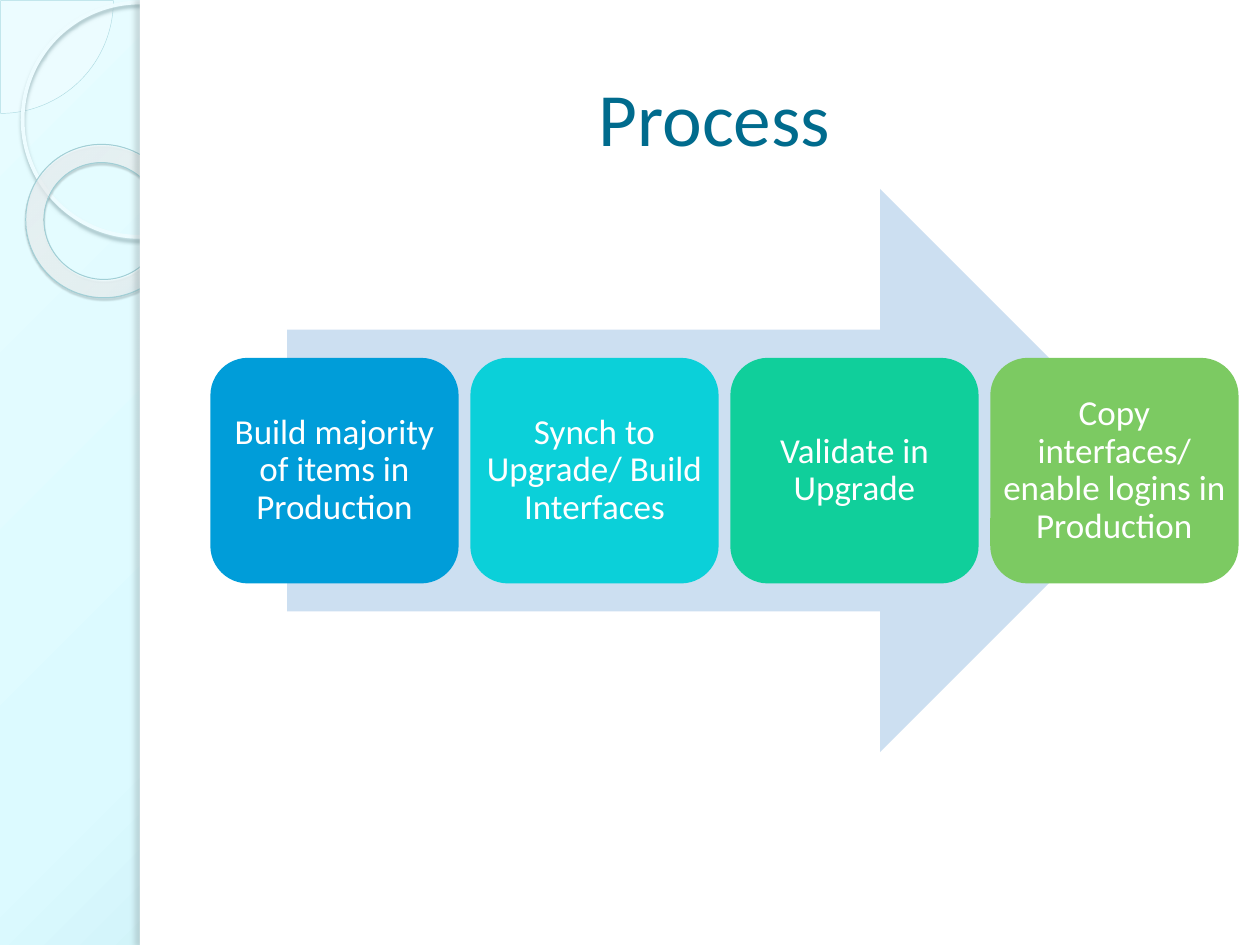
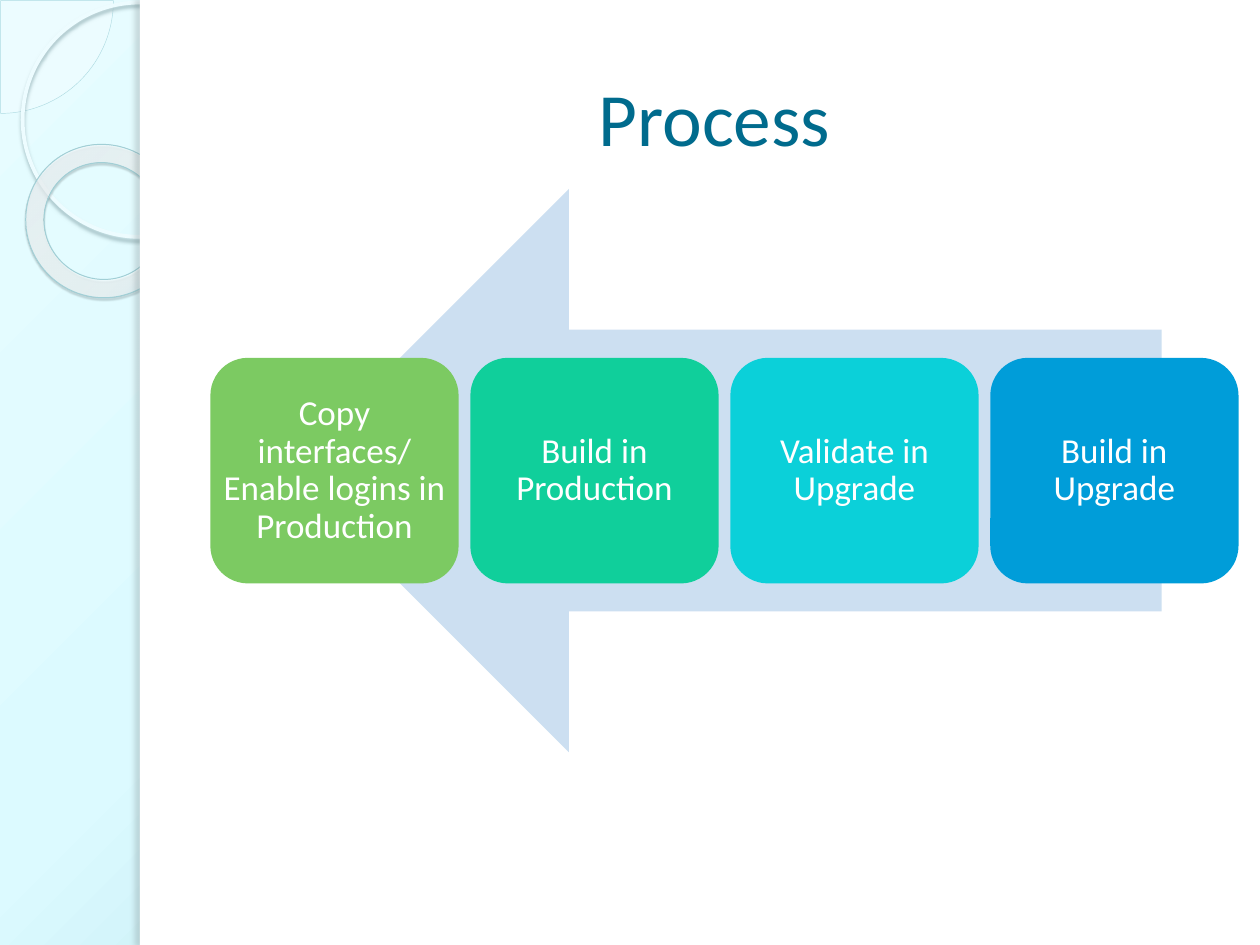
from lxml.etree import SubElement
from pptx import Presentation
from pptx.dml.color import RGBColor
from pptx.enum.shapes import MSO_SHAPE
from pptx.enum.text import MSO_ANCHOR, PP_ALIGN
from pptx.oxml.ns import qn
from pptx.util import Inches, Pt

# Content: steps in the order of work, and the way the arrow points
TITLE = "Process"
PROCESSES = [
    {
        "arrow": MSO_SHAPE.RIGHT_ARROW,
        "steps": [
            "Build majority of items in Production",
            "Synch to Upgrade/ Build Interfaces",
            "Validate in Upgrade",
            "Copy interfaces/ enable logins in Production",
        ],
    },
    {
        "arrow": MSO_SHAPE.LEFT_ARROW,
        "steps": [
            "Build in Upgrade",
            "Validate in Upgrade",
            "Build in Production",
            "Copy interfaces/ Enable logins in Production",
        ],
    },
]

# Colours and font
FONT = "Calibri"
WHITE = RGBColor(0xFF, 0xFF, 0xFF)
TITLE_COLOR = RGBColor(0x00, 0x6B, 0x8D)
ARROW_COLOR = RGBColor(0xCC, 0xDF, 0xF1)
STEP_COLORS = [
    RGBColor(0x00, 0x9D, 0xD9),
    RGBColor(0x0B, 0xD0, 0xD9),
    RGBColor(0x10, 0xCF, 0x9B),
    RGBColor(0x7C, 0xCA, 0x62),
]
PIE_FILL = RGBColor(0xF8, 0xFE, 0xFF)
PIE_LINE = RGBColor(0xAF, 0xDB, 0xE2)
RING_LINE = RGBColor(0xED, 0xFC, 0xFF)
RING_SHADOW = RGBColor(0x9C, 0xB9, 0xBE)
DONUT_LINE = RGBColor(0xA1, 0xCF, 0xD6)
DONUT_SHADOW = RGBColor(0x4B, 0x5E, 0x61)
PANEL_SHADOW = RGBColor(0x6C, 0x7A, 0x7C)

# Gradient stops: position in percent, colour, opacity in percent
BACKGROUND_STOPS = [
    (0, RGBColor(0xE7, 0xFC, 0xFF), 100),
    (40, RGBColor(0xDC, 0xFA, 0xFF), 100),
    (100, RGBColor(0x92, 0xCE, 0xD7), 100),
]
DONUT_STOPS = [
    (0, RGBColor(0xF9, 0xFE, 0xFF), 70),
    (70, RGBColor(0xFD, 0xFF, 0xFF), 55),
    (100, RGBColor(0x9E, 0xF2, 0xFF), 60),
]

# Layout in inches
WIDTH, HEIGHT = 10, 7.5
PANEL_LEFT = 1.11
TITLE_BOX = (1.57, 0.3, 8.2, 1.25)
ARROW_BOX = (2.28, 1.5, 6.94, 4.47)
STEP_LEFT, STEP_RIGHT = 1.67, 9.83
STEP_WIDTH, STEP_HEIGHT = 1.97, 1.79


def add_color(parent, color, opacity):
    node = SubElement(parent, qn("a:srgbClr"), val=str(color))
    if opacity < 100:
        SubElement(node, qn("a:alpha"), val=str(opacity * 1000))


def set_radial_gradient(properties, stops, focus):
    """Replace a solid fill by a circular gradient around a focus point."""
    solid = properties.find(qn("a:solidFill"))
    gradient = SubElement(properties, qn("a:gradFill"), rotWithShape="1")
    properties.replace(solid, gradient)
    stop_list = SubElement(gradient, qn("a:gsLst"))
    for position, color, opacity in stops:
        stop = SubElement(stop_list, qn("a:gs"), pos=str(position * 1000))
        add_color(stop, color, opacity)
    circle = SubElement(gradient, qn("a:path"))
    circle.set("path", "circle")
    x, y = focus
    edges = {"l": x, "t": y, "r": 100 - x, "b": 100 - y}
    SubElement(circle, qn("a:fillToRect"),
               {edge: str(share * 1000) for edge, share in edges.items()})


def set_shadow(shape, color, opacity, blur, distance, angle):
    effects = shape.element.spPr.find(qn("a:effectLst"))
    shadow = SubElement(effects, qn("a:outerShdw"), blurRad=str(Pt(blur)),
                        dist=str(Pt(distance)), dir=str(angle * 60000),
                        algn="tl", rotWithShape="0")
    add_color(shadow, color, opacity)


def add_shape(slide, kind, box, fill=None, line=None, line_width=0):
    shape = slide.shapes.add_shape(kind, *map(Inches, box))
    shape.shadow.inherit = False
    if fill is None:
        shape.fill.background()
    else:
        shape.fill.solid()
        shape.fill.fore_color.rgb = fill
    if line is None:
        shape.line.fill.background()
    else:
        shape.line.color.rgb = line
        shape.line.width = Pt(line_width)
    return shape


def write_text(shape, text, size, color):
    frame = shape.text_frame
    frame.word_wrap = True
    frame.vertical_anchor = MSO_ANCHOR.MIDDLE
    paragraph = frame.paragraphs[0]
    paragraph.alignment = PP_ALIGN.CENTER
    run = paragraph.add_run()
    run.text = text
    run.font.name = FONT
    run.font.size = Pt(size)
    run.font.color.rgb = color
    return frame


def add_side_band(slide):
    # Tinted background
    slide.background.fill.solid()
    background = slide.element.find(".//" + qn("p:bgPr"))
    set_radial_gradient(background, BACKGROUND_STOPS, (-24, -20))

    # Quarter disc in the corner
    pie = add_shape(slide, MSO_SHAPE.PIE, (-0.89, -0.89, 1.79, 1.79),
                    PIE_FILL, PIE_LINE, 0.25)
    pie.adjustments[0] = 0
    pie.adjustments[1] = 54.02
    tint = pie.element.spPr.find(qn("a:solidFill"))[0]
    SubElement(tint, qn("a:alpha"), val="33000")

    # Thin ring and thick ring
    ring = add_shape(slide, MSO_SHAPE.OVAL, (0.18, 0.02, 1.86, 1.86),
                     line=RING_LINE, line_width=2.15)
    set_shadow(ring, RING_SHADOW, 85, 2, 2, 90)
    donut = add_shape(slide, MSO_SHAPE.DONUT, (0.2, 1.15, 1.23, 1.21),
                      WHITE, DONUT_LINE, 0.58)
    donut.adjustments[0] = 0.12
    donut.rotation = 38.6
    set_radial_gradient(donut.element.spPr, DONUT_STOPS, (-408, -50))
    set_shadow(donut, DONUT_SHADOW, 35, 1, 1.2, 75)

    # White panel with a shaded left edge
    add_shape(slide, MSO_SHAPE.RECTANGLE,
              (PANEL_LEFT, 0, WIDTH - PANEL_LEFT, HEIGHT), WHITE)
    edge = add_shape(slide, MSO_SHAPE.RECTANGLE,
                     (PANEL_LEFT, 0, 0.08, HEIGHT), WHITE)
    set_shadow(edge, PANEL_SHADOW, 25, 3, 3, 180)


def add_process(slide, arrow, steps):
    add_shape(slide, arrow, ARROW_BOX, ARROW_COLOR)
    pitch = (STEP_RIGHT - STEP_LEFT - STEP_WIDTH) / (len(steps) - 1)
    top = ARROW_BOX[1] + (ARROW_BOX[3] - STEP_HEIGHT) / 2
    for index, (step, color) in enumerate(zip(steps, STEP_COLORS)):
        leftward = arrow == MSO_SHAPE.LEFT_ARROW
        column = len(steps) - 1 - index if leftward else index
        box = (STEP_LEFT + column * pitch, top, STEP_WIDTH, STEP_HEIGHT)
        card = add_shape(slide, MSO_SHAPE.ROUNDED_RECTANGLE, box, color)
        frame = write_text(card, step, 20, WHITE)
        frame.paragraphs[0].line_spacing = 0.9
        frame.margin_left = frame.margin_right = 0
        frame.margin_top = frame.margin_bottom = 0


def main():
    presentation = Presentation()
    presentation.slide_width = Inches(WIDTH)
    presentation.slide_height = Inches(HEIGHT)
    for process in PROCESSES:
        slide = presentation.slides.add_slide(presentation.slide_layouts[6])
        add_side_band(slide)
        add_process(slide, process["arrow"], process["steps"])
        title = slide.shapes.add_textbox(*map(Inches, TITLE_BOX))
        write_text(title, TITLE, 43, TITLE_COLOR)
    presentation.save("out.pptx")


if __name__ == "__main__":
    main()
